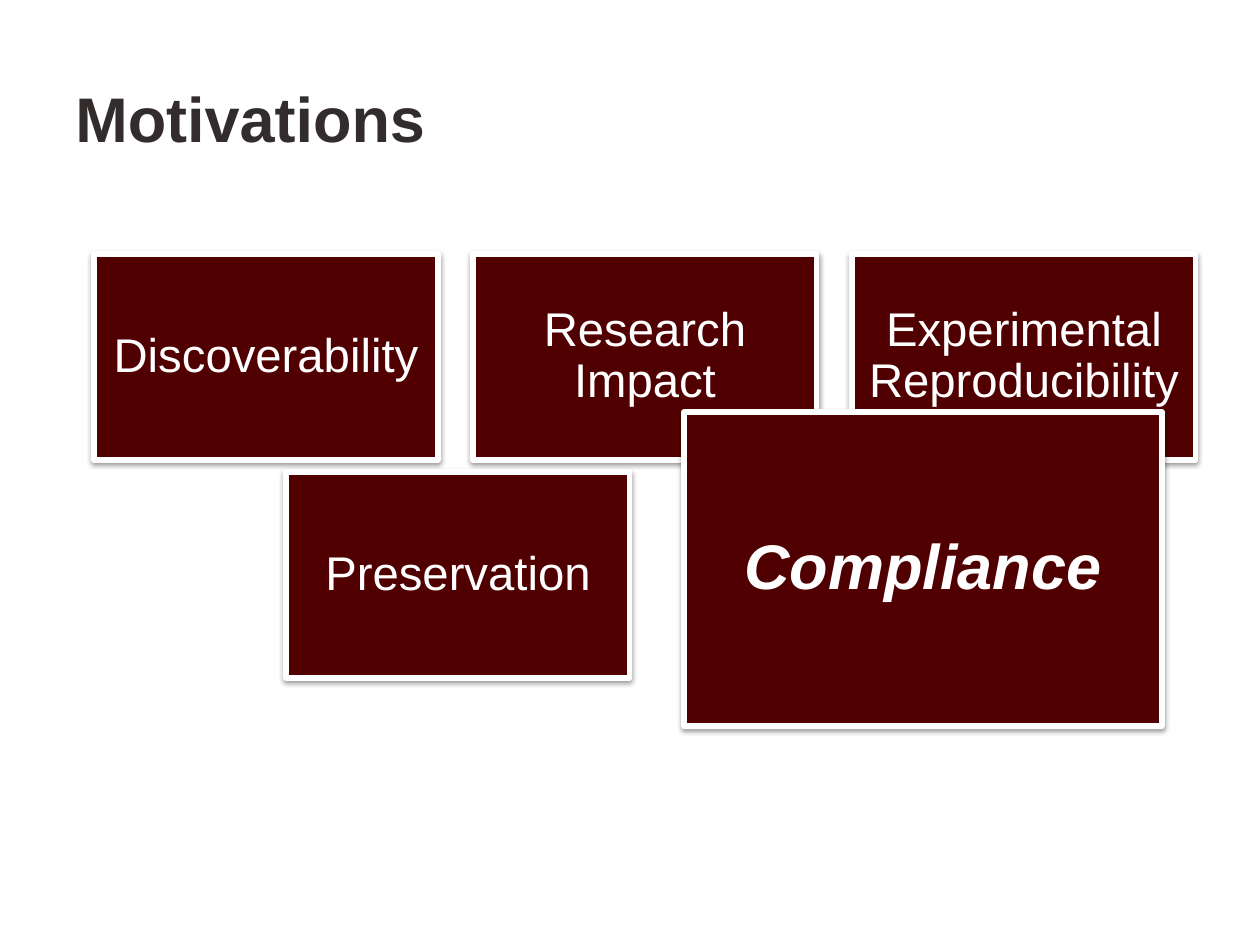
import pptx
import pptx.util
import pptx.dml.color
import pptx.enum.shapes
import pptx.enum.text
import pptx.oxml
import pptx.oxml.ns

PX = 914400 // 126
FONT = "Arial"
COLOR = {"title": "332C2C", "card": "500000", "white": "FFFFFF"}

TITLE = "Motivations"
ROWS = [
    # left, top, labels
    (94, 254, ["Discoverability", "Research Impact", "Experimental Reproducibility"]),
    (286, 472, ["Preservation"]),
]
CARD_W, CARD_H, GAP = 344, 206, 35
FOCUS = ("Compliance", (684, 412, 478, 314))

SHADOW = (
    '<a:outerShdw %s blurRad="40000" dist="20000" dir="5400000" rotWithShape="0">'
    '<a:srgbClr val="000000"><a:alpha val="38000"/></a:srgbClr></a:outerShdw>'
    % pptx.oxml.ns.nsdecls("a")
)


def rgb(name):
    return pptx.dml.color.RGBColor.from_string(COLOR[name])


def emu(box):
    return [n * PX for n in box]


def write(shape, text, size, color, bold=False, italic=False):
    frame = shape.text_frame
    frame.word_wrap = True
    frame.vertical_anchor = pptx.enum.text.MSO_ANCHOR.MIDDLE
    run = frame.paragraphs[0].add_run()
    run.text = text
    font = run.font
    font.name, font.size = FONT, pptx.util.Pt(size)
    font.bold, font.italic = bold, italic
    font.color.rgb = rgb(color)
    return frame


def card(slide, text, box, inset=14, size=27, strong=False):
    shape = slide.shapes.add_shape(pptx.enum.shapes.MSO_SHAPE.RECTANGLE, *emu(box))
    shape.fill.solid()
    shape.fill.fore_color.rgb = rgb("card")
    shape.line.color.rgb = rgb("white")
    shape.line.width = pptx.util.Pt(3)
    shape.shadow.inherit = False
    effects = shape._element.spPr.find(pptx.oxml.ns.qn("a:effectLst"))
    effects.append(pptx.oxml.parse_xml(SHADOW))
    frame = write(shape, text, size, "white", strong, strong)
    frame.margin_left = frame.margin_right = inset * PX
    frame.margin_top = frame.margin_bottom = inset * PX
    para = frame.paragraphs[0]
    para.alignment = pptx.enum.text.PP_ALIGN.CENTER
    para.line_spacing = 0.9


def main():
    deck = pptx.Presentation()
    deck.slide_width, deck.slide_height = emu((1260, 945))
    slide = deck.slides.add_slide(deck.slide_layouts[6])
    head = slide.shapes.add_textbox(*emu((63, 38, 1134, 158)))
    write(head, TITLE, 36, "title", bold=True)
    for left, top, labels in ROWS:
        for i, label in enumerate(labels):
            card(slide, label, (left + i * (CARD_W + GAP), top, CARD_W, CARD_H))
    card(slide, *FOCUS, inset=19, size=36, strong=True)
    deck.save("out.pptx")


if __name__ == "__main__":
    main()
